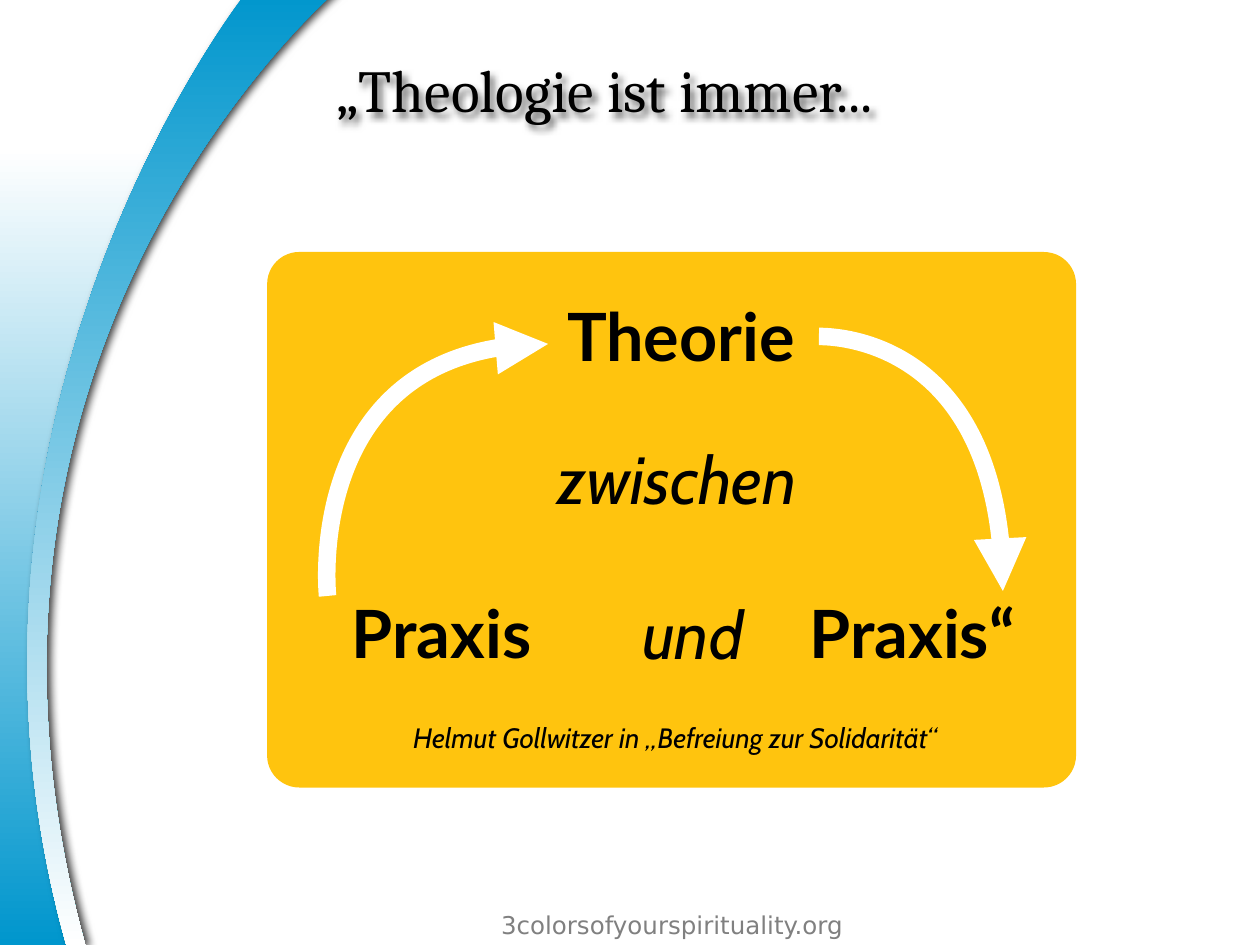
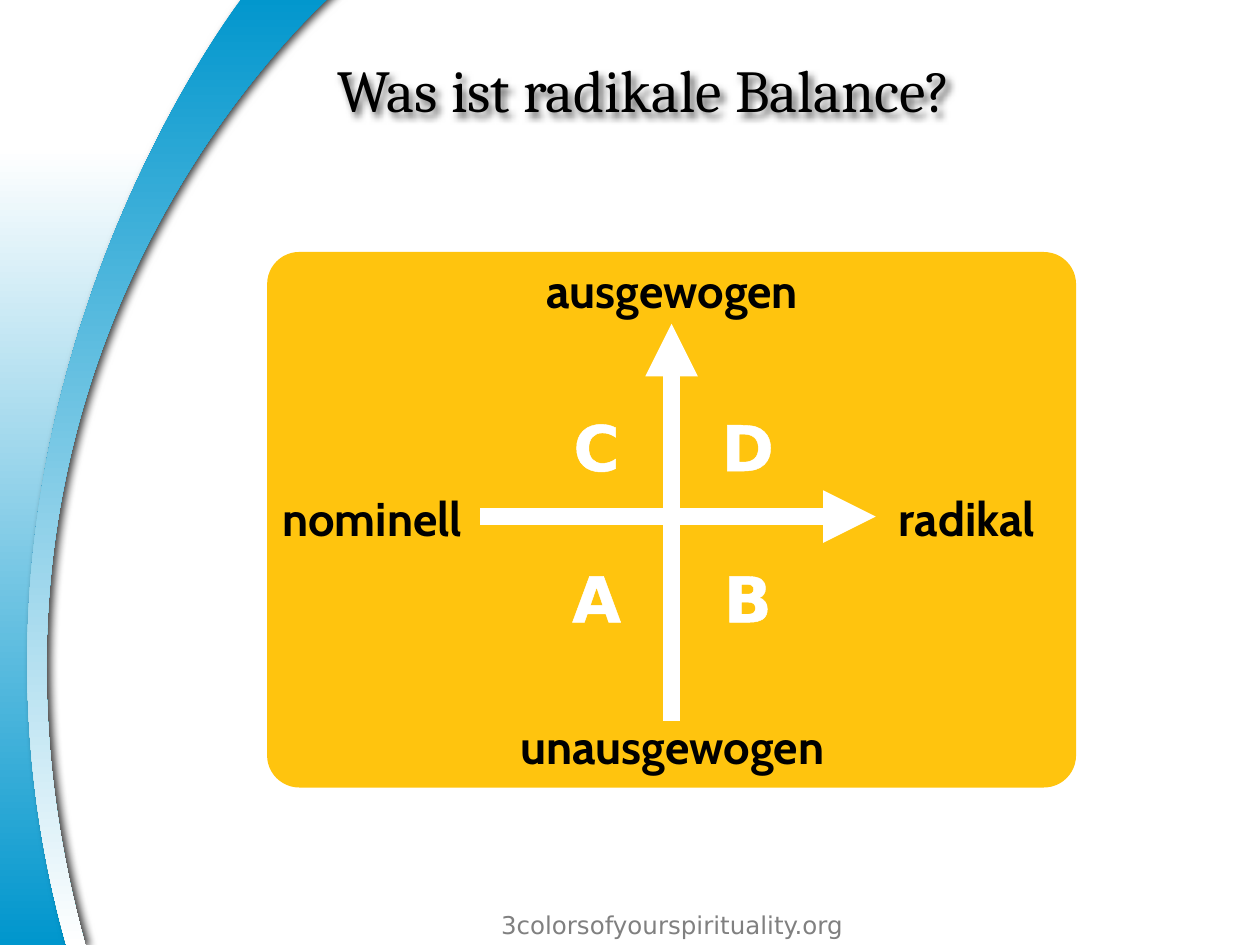
import dataclasses
import typing

import lxml.etree
import pptx
import pptx.dml.color
import pptx.enum.shapes
import pptx.enum.text
import pptx.oxml.ns
import pptx.util

Inches = pptx.util.Inches
Pt = pptx.util.Pt
qn = pptx.oxml.ns.qn
Align = pptx.enum.text.PP_ALIGN
Anchor = pptx.enum.text.MSO_ANCHOR
Point = tuple[float, float]

COLORS = {
    "black": "000000",
    "white": "FFFFFF",
    "blue": "0096CD",
    "yellow": "FFC40E",
    "grey": "808080",
}
ARROW_WIDTH = Pt(10)


@dataclasses.dataclass(frozen=True)
class TextStyle:
    font: str
    size: float
    color: str = "black"
    bold: bool = False
    italic: bool = False
    outline: bool = False
    align: typing.Any = Align.CENTER
    anchor: typing.Any = Anchor.TOP
    wrap: bool = True


@dataclasses.dataclass(frozen=True)
class Label:
    text: str
    left: float
    top: float
    width: float
    height: float
    style: TextStyle


@dataclasses.dataclass(frozen=True)
class Shadow:
    blur: float
    distance: float
    angle: int
    opacity: int


@dataclasses.dataclass(frozen=True)
class Band:
    """A closed curve: its first point, then two handles and an end per segment."""
    points: list[Point]
    top_color: str
    bottom_color: str
    shadow: Shadow | None = None


TITLE = TextStyle("Cambria", 34, align=Align.LEFT, anchor=Anchor.MIDDLE)
FOOTER = TextStyle("DejaVu Sans", 14, "grey")
POLE = TextStyle("Lato", 38, bold=True)
LINK_WORD = TextStyle("Cabin", 38, italic=True)
CITATION = TextStyle("Cabin", 16, italic=True)
AXIS = TextStyle("Cabin", 27, bold=True)
QUADRANT = TextStyle("DejaVu Sans", 36, "white", bold=True, outline=True, wrap=False)

TITLE_SHADOW = Shadow(blur=4, distance=3, angle=45, opacity=60)
BANDS = [
    Band(
        [(0, 1.17),
         (0.65, 1.17), (0.41, 1.17), (1.51, 1.17),
         (-0.35, 4.32), (0.5, 6.89), (0.65, 7.5),
         (0.32, 7.5), (0, 7.5), (0, 7.5),
         (-0.11, 6.44), (0, 1.17), (0, 1.17)],
        "white", "blue",
    ),
    Band(
        [(0.53, 7.51),
         (0.61, 7.51), (0.68, 7.51), (0.68, 7.51),
         (-0.64, 2.73), (2.67, -0.07), (2.67, -0.07),
         (2.67, -0.07), (1.97, -0.08), (1.97, -0.08),
         (1.97, -0.08), (-0.67, 3.26), (0.53, 7.51)],
        "blue", "white", Shadow(blur=5, distance=3, angle=0, opacity=75),
    ),
]

THEORY_LABELS = [
    Label("Theorie", 3.99, 2.29, 2.83, 0.73, POLE),
    Label("zwischen", 3.96, 3.43, 2.83, 0.73, LINK_WORD),
    Label("Praxis", 2.09, 4.65, 2.83, 0.73, POLE),
    Label("und", 4.75, 4.66, 1.5, 0.73, LINK_WORD),
    Label("Praxis“", 6.14, 4.65, 2.2, 0.73, POLE),
    Label("Helmut Gollwitzer in „Befreiung zur Solidarität“",
          2.65, 5.67, 5.42, 0.37, CITATION),
]
THEORY_ARROWS = [
    [(2.6, 4.73), (2.6, 4.73), (2.39, 2.73), (4.35, 2.73)],
    [(6.5, 2.67), (6.79, 2.67), (7.96, 2.84), (7.96, 4.69)],
]
AXIS_LABELS = [
    Label(text, left, top, 2.83, 0.55, AXIS)
    for text, left, top in [
        ("nominell", 1.54, 3.83),
        ("radikal", 6.26, 3.83),
        ("ausgewogen", 3.92, 2.02),
        ("unausgewogen", 3.92, 5.64),
    ]
]
AXIS_ARROWS = [((3.81, 4.1), (6.95, 4.1)), ((5.33, 5.72), (5.33, 2.57))]
QUADRANT_LABELS = [
    Label(letter, 4.42 + 1.2 * (index % 2), 4.39 - 1.2 * (index // 2),
          0.63, 0.67, QUADRANT)
    for index, letter in enumerate("ABCD")
]


def rgb(name: str) -> pptx.dml.color.RGBColor:
    return pptx.dml.color.RGBColor.from_string(COLORS[name])


def add_solid_fill(parent, name: str, opacity: int = 100) -> None:
    fill = lxml.etree.SubElement(parent, qn("a:solidFill"))
    color = lxml.etree.SubElement(fill, qn("a:srgbClr"), val=COLORS[name])
    if opacity < 100:
        lxml.etree.SubElement(color, qn("a:alpha"), val=str(opacity * 1000))


def set_effects(shape, shadow: Shadow | None = None) -> None:
    """Replace the theme's shadow by the given one, or by none."""
    effects = lxml.etree.SubElement(shape._element.spPr, qn("a:effectLst"))
    if shadow:
        outer = lxml.etree.SubElement(
            effects, qn("a:outerShdw"), blurRad=str(Pt(shadow.blur)),
            dist=str(Pt(shadow.distance)), dir=str(shadow.angle * 60000),
            algn="tl", rotWithShape="0")
        color = lxml.etree.SubElement(outer, qn("a:srgbClr"), val=COLORS["black"])
        lxml.etree.SubElement(color, qn("a:alpha"), val=str(shadow.opacity * 1000))


def add_label(page, label: Label):
    style = label.style
    box = page.shapes.add_textbox(Inches(label.left), Inches(label.top),
                                  Inches(label.width), Inches(label.height))
    frame = box.text_frame
    frame.word_wrap = style.wrap
    frame.vertical_anchor = style.anchor
    para = frame.paragraphs[0]
    para.alignment = style.align
    span = para.add_run()
    span.text = label.text
    span.font.name = style.font
    span.font.size = Pt(style.size)
    span.font.bold = style.bold
    span.font.italic = style.italic
    span.font.color.rgb = rgb(style.color)
    if style.outline:
        line = lxml.etree.Element(qn("a:ln"), w=str(Pt(0.75)))
        add_solid_fill(line, style.color)
        span.font._element.insert(0, line)
    return box


def add_curve(page, points: list[Point], close: bool):
    """Draw a freeform whose points after the first are cubic segments."""
    start, *rest = [(Inches(x), Inches(y)) for x, y in points]
    builder = page.shapes.build_freeform(*start)
    builder.add_line_segments(rest, close=close)
    shape = builder.convert_to_shape()
    steps = list(shape._element.iter(qn("a:lnTo")))
    for first in range(0, len(rest), 3):
        segment = lxml.etree.Element(qn("a:cubicBezTo"))
        steps[first].addprevious(segment)
        for step in steps[first:first + 3]:
            segment.append(step[0])
            step.getparent().remove(step)
    return shape


def add_band(page, band: Band) -> None:
    shape = add_curve(page, band.points, close=True)
    shape.fill.gradient()
    shape.fill.gradient_angle = 270
    for stop, name in zip(shape.fill.gradient_stops,
                          (band.top_color, band.bottom_color)):
        stop.color.rgb = rgb(name)
    shape.line.fill.background()
    set_effects(shape, band.shadow)


def style_arrow(shape) -> None:
    shape.line.color.rgb = rgb("white")
    shape.line.width = ARROW_WIDTH
    line = shape._element.spPr.find(qn("a:ln"))
    lxml.etree.SubElement(line, qn("a:tailEnd"), type="triangle")
    set_effects(shape)


def add_curved_arrow(page, points: list[Point]) -> None:
    shape = add_curve(page, points, close=False)
    shape.fill.background()
    style_arrow(shape)


def add_straight_arrow(page, start: Point, end: Point) -> None:
    style_arrow(page.shapes.add_connector(
        pptx.enum.shapes.MSO_CONNECTOR.STRAIGHT,
        *[Inches(value) for value in (*start, *end)]))


def add_page(deck, title: str):
    """Add a page with the bands, footer, title and yellow panel."""
    page = deck.slides.add_slide(deck.slide_layouts[6])
    for band in BANDS:
        add_band(page, band)
    add_label(page, Label("3colorsofyourspirituality.org",
                          3.75, 7.17, 3.17, 0.33, FOOTER))
    title_box = add_label(page, Label(title, 2.58, 0.08, 7.42, 1.25, TITLE))
    set_effects(title_box, TITLE_SHADOW)
    panel = page.shapes.add_shape(
        pptx.enum.shapes.MSO_SHAPE.ROUNDED_RECTANGLE,
        Inches(2.12), Inches(2), Inches(6.42), Inches(4.25))
    panel.adjustments[0] = 0.06
    panel.fill.solid()
    panel.fill.fore_color.rgb = rgb("yellow")
    panel.line.fill.background()
    panel.shadow.inherit = False
    return page


def add_theory_page(deck) -> None:
    page = add_page(deck, "„Theologie ist immer...")
    for label in THEORY_LABELS:
        add_label(page, label)
    for points in THEORY_ARROWS:
        add_curved_arrow(page, points)


def add_balance_page(deck) -> None:
    page = add_page(deck, "Was ist radikale Balance?")
    for start, end in AXIS_ARROWS:
        add_straight_arrow(page, start, end)
    for label in AXIS_LABELS + QUADRANT_LABELS:
        add_label(page, label)


def main() -> None:
    deck = pptx.Presentation()
    deck.slide_width = Inches(10)
    deck.slide_height = Inches(7.5)
    add_theory_page(deck)
    add_balance_page(deck)
    deck.save("out.pptx")


if __name__ == "__main__":
    main()
